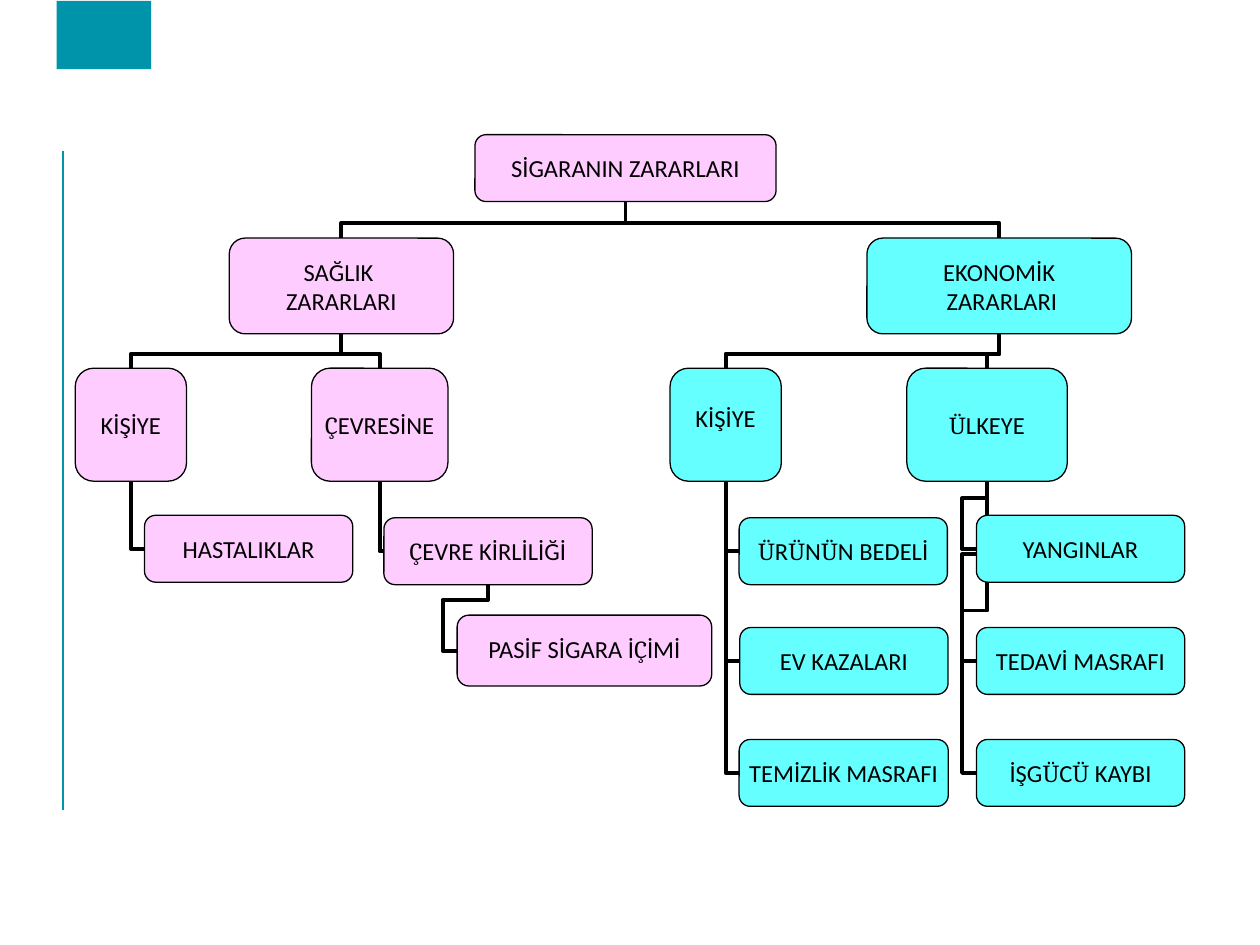
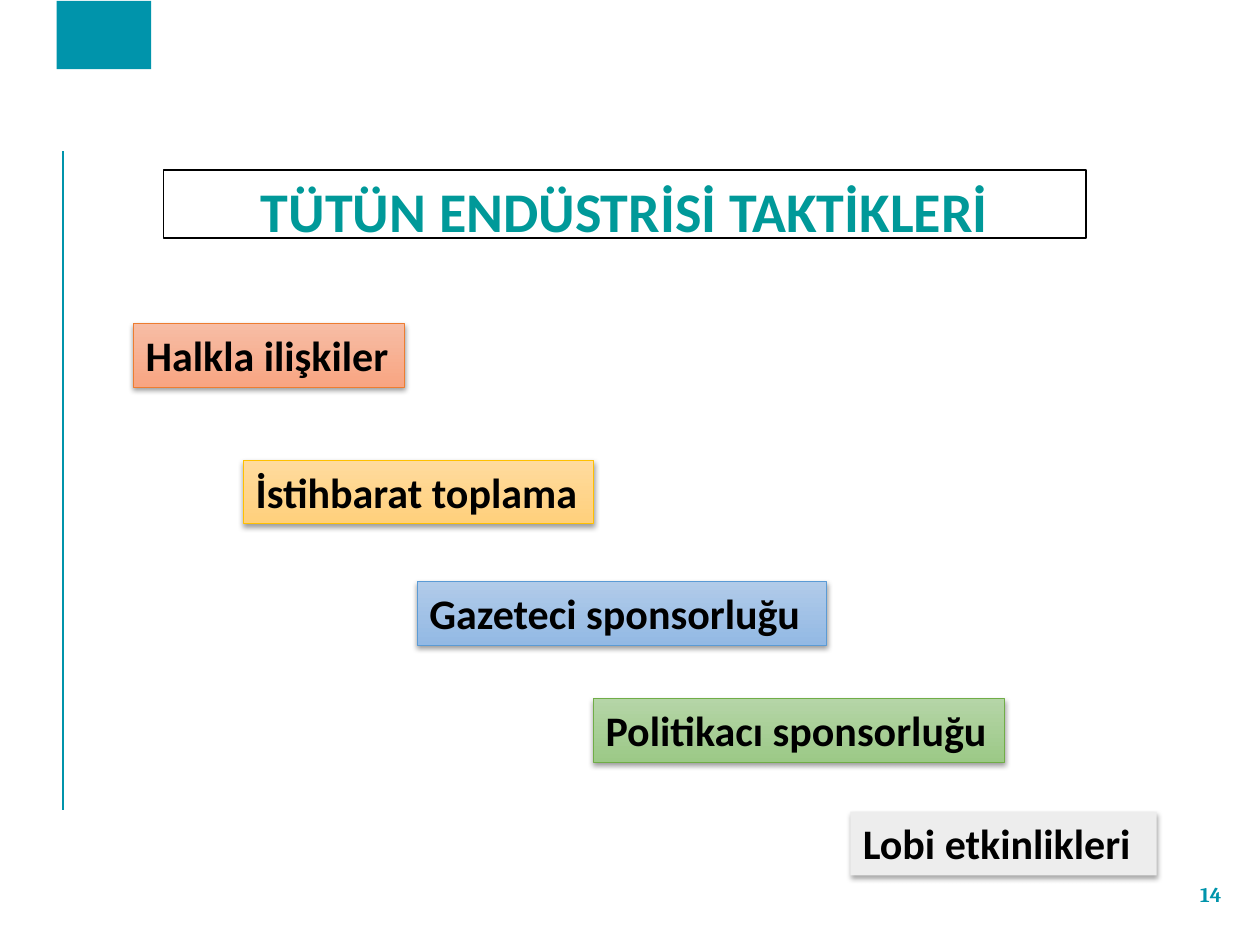
"""Build two slides on the harms of smoking and the tactics of the tobacco industry."""
from dataclasses import dataclass
from itertools import groupby

from lxml.etree import SubElement
from pptx import Presentation
from pptx.dml.color import RGBColor
from pptx.enum.shapes import MSO_CONNECTOR as Line, MSO_SHAPE as Shape
from pptx.enum.text import MSO_ANCHOR as Anchor, PP_ALIGN as Align
from pptx.oxml.ns import qn
from pptx.util import Pt


@dataclass(frozen=True)
class Theme:
    accent: str = "0094AB"
    title: str = "009999"
    ink: str = "000000"
    pink: str = "FFCCFF"
    cyan: str = "66FFFF"
    body_font: str = "Calibri"
    accent_font: str = "Cambria"
    title_size: float = 32
    tactic_size: float = 24
    node_size: float = 14
    number_size: float = 12


THEME = Theme()
BUS_DROP = 0.58
BRACKET_REACH = 8.3

ROW_TOPS = (294.5, 358.6, 422.6)
NODES = {
    "root": ("SİGARANIN ZARARLARI", 271.4, 77, 172.1, 38.2, THEME.pink),
    "health": ("SAĞLIK \nZARARLARI", 131, 136.1, 128.2, 54.7, THEME.pink),
    "economy": ("EKONOMİK\n ZARARLARI", 495.4, 136.1, 151.2, 54.7, THEME.cyan),
    "person": ("KİŞİYE", 43, 210.4, 63.6, 64.6, THEME.pink),
    "surroundings": ("ÇEVRESİNE", 178, 210.4, 78, 64.6, THEME.pink),
    "purse": ("KİŞİYE", 382.9, 210.4, 63.6, 64.6, THEME.cyan),
    "country": ("ÜLKEYE", 518.2, 210.4, 91.7, 64.6, THEME.cyan),
    "illness": ("HASTALIKLAR", 82.6, ROW_TOPS[0], 119, 38.2, THEME.pink),
    "pollution": ("ÇEVRE KİRLİLİĞİ", 219.4, 295.9, 119, 38.2, THEME.pink),
    "fires": ("YANGINLAR", 558, ROW_TOPS[0], 119, 38.2, THEME.cyan),
    "price": ("ÜRÜNÜN BEDELİ", 422.4, 295.9, 119, 38.2, THEME.cyan),
    "accidents": ("EV KAZALARI", 422.8, ROW_TOPS[1], 119, 38.2, THEME.cyan),
    "cleaning": ("TEMİZLİK MASRAFI", 422.4, ROW_TOPS[2], 119.5, 38.2, THEME.cyan),
    "treatment": ("TEDAVİ MASRAFI", 558, ROW_TOPS[1], 119, 38.2, THEME.cyan),
    "workforce": ("İŞGÜCÜ KAYBI", 558, ROW_TOPS[2], 119, 38.2, THEME.cyan),
    "passive": ("PASİF SİGARA İÇİMİ", 261.2, 351.5, 145.5, 40.5, THEME.pink),
}
LIFTS = {"purse": 7.5, "passive": 2.4}
BRANCHES = {
    "root": ("health", "economy"),
    "health": ("person", "surroundings"),
    "economy": ("purse", "country"),
}
HANGERS = {
    "person": ("illness",),
    "surroundings": ("pollution",),
    "purse": ("price", "accidents", "cleaning"),
}
BRACKETS = {
    "country": ("fires", "treatment", "workforce"),
    "pollution": ("passive",),
}

TACTICS = (
    ("Halkla ilişkiler", 76.2, 184.8, 155, ("F7BDA5", "F8A582"), "ED7D31"),
    ("İstihbarat toplama", 139, 263, 200.2, ("FFDB9E", "FFD07C"), "FFC000"),
    ("Gazeteci sponsorluğu", 238.3, 332.3, 234, ("B1CBE9", "93B9E4"), "5B9BD5"),
    ("Politikacı sponsorluğu", 339, 399.2, 235, ("B5D5A7", "9CC987"), "70AD47"),
    ("Lobi etkinlikleri", 486, 463.8, 175, ("EDEDED",), None),
)


def rgb(value):
    return RGBColor.from_string(value)


def apply(target, values):
    for name, value in values.items():
        setattr(target, name, value)


def points(*lengths):
    return [Pt(length) for length in lengths]


def set_line(line, color, width):
    line.color.rgb = rgb(color)
    line.width = Pt(width)


def write(box, text, size, color, bold=False, align=Align.CENTER, fonts=None):
    """Write each line of text, choosing the font of every character run."""
    pick = fonts or (lambda letter: THEME.body_font)
    frame = box.text_frame
    for index, content in enumerate(text.split("\n")):
        para = frame.add_paragraph() if index else frame.paragraphs[0]
        para.alignment = align
        for name, letters in groupby(content, pick):
            span = para.add_run()
            span.text = "".join(letters)
            apply(span.font, {"name": name, "size": Pt(size), "bold": bold})
            span.font.color.rgb = rgb(color)


def add_box(page, shape, frame, fills=(), outline=None, width=0.75):
    box = page.shapes.add_shape(shape, *points(*frame))
    box.shadow.inherit = False
    if len(fills) == 2:
        box.fill.gradient()
        box.fill.gradient_angle = 270
        for stop, color in zip(box.fill.gradient_stops, fills):
            stop.color.rgb = rgb(color)
    elif fills:
        box.fill.solid()
        box.fill.fore_color.rgb = rgb(fills[0])
    else:
        box.fill.background()
    if outline:
        set_line(box.line, outline, width)
    else:
        box.line.fill.background()
    return box


def add_line(page, kind, ends, color, width):
    line = page.shapes.add_connector(kind, *points(*ends))
    set_line(line.line, color, width)
    SubElement(line._element.spPr, qn("a:effectLst"))
    return line


def add_elbow(page, preset, frame, adjustments=(), **turn):
    """Draw a bent connector in a left, top, width, height frame."""
    left, top, width, height = frame
    ends = left, top, left + width, top + height
    properties = add_line(page, Line.ELBOW, ends, THEME.ink, 2.25)._element.spPr
    for name, value in turn.items():
        properties.find(qn("a:xfrm")).set(name, str(value))
    geometry = properties.find(qn("a:prstGeom"))
    geometry.set("prst", preset)
    guides = geometry.find(qn("a:avLst"))
    if guides is None:
        guides = SubElement(geometry, qn("a:avLst"))
    for number, share in enumerate(adjustments, 1):
        formula = f"val {round(share * 100000)}"
        SubElement(guides, qn("a:gd"), name=f"adj{number}", fmla=formula)


def bottom_middle(key):
    _, left, top, width, height, _ = NODES[key]
    return left + width / 2, top + height


def left_middle(key):
    _, left, top, _, height, _ = NODES[key]
    return left, top + height / 2


def add_branch(page, parent, child):
    """Link the bottom of a parent to the top of a child."""
    start_x, start_y = bottom_middle(parent)
    end_x, end_y = bottom_middle(child)[0], NODES[child][2]
    drop, shift = end_y - start_y, abs(end_x - start_x)
    frame = ((start_x + end_x - drop) / 2, (start_y + end_y - shift) / 2, drop, shift)
    add_elbow(page, "bentConnector3", frame, (BUS_DROP,),
              rot=90 * 60000, flipV=int(end_x > start_x))


def add_hanger(page, parent, child):
    """Link a parent's bottom to the left side of a child standing to its right."""
    left, top = bottom_middle(parent)
    right, bottom = left_middle(child)
    add_elbow(page, "bentConnector2", (left, top, right - left, bottom - top), rot=180 * 60000)


def add_bracket(page, parent, child):
    """Link a parent's bottom to a child's left side around its outer edge."""
    right, top = bottom_middle(parent)
    left, bottom = left_middle(child)
    width, height = right - left, bottom - top
    turn_y = (top + NODES[child][2]) / 2
    shares = -BRACKET_REACH / width, (bottom - turn_y) / height
    add_elbow(page, "bentConnector4", (left, top, width, height), shares,
              rot=180 * 60000, flipH=1)


def add_node(page, key):
    text, *frame, fill = NODES[key]
    box = add_box(page, Shape.ROUNDED_RECTANGLE, frame, (fill,), THEME.ink)
    apply(box.text_frame, {
        "word_wrap": False, "vertical_anchor": Anchor.MIDDLE,
        "margin_left": 0, "margin_right": 0, "margin_top": 0,
        "margin_bottom": Pt(LIFTS.get(key, 0)),
    })
    write(box, text, THEME.node_size, THEME.ink,
          fonts=lambda letter: THEME.accent_font if letter in "ÇÜ" else THEME.body_font)


def add_shadow(box, opacity, distance):
    """Give a box a soft shadow falling straight down."""
    effects = box._element.spPr.find(qn("a:effectLst"))
    shadow = SubElement(effects, qn("a:outerShdw"), blurRad=str(Pt(3.1)),
                        dist=str(Pt(distance)), dir=str(90 * 60000), rotWithShape="0")
    color = SubElement(shadow, qn("a:srgbClr"), val=THEME.ink)
    SubElement(color, qn("a:alpha"), val=str(opacity * 1000))


def add_tactic(page, text, left, top, width, fills, outline):
    box = add_box(page, Shape.RECTANGLE, (left, top, width, 36.4), fills, outline, 0.5)
    add_shadow(box, *((38, 1.6) if outline else (35, 1.8)))
    apply(box.text_frame, {"word_wrap": True, "vertical_anchor": Anchor.TOP})
    write(box, text, THEME.tactic_size, THEME.ink, True, Align.LEFT)


def add_title(page, text):
    box = add_box(page, Shape.RECTANGLE, (93.5, 97.2, 527.2, 38.8 + 7.2 - 7.2), (), THEME.ink)
    apply(box.text_frame, {"word_wrap": True, "vertical_anchor": Anchor.TOP})
    write(box, text, THEME.title_size, THEME.title, True)


def add_page_number(page, number):
    box = page.shapes.add_textbox(*points(666, 482.4, 51.8, 57.6))
    apply(box.text_frame, {"word_wrap": True, "vertical_anchor": Anchor.MIDDLE})
    write(box, number, THEME.number_size, THEME.accent, True,
          fonts=lambda letter: THEME.accent_font)


def add_page(deck):
    """Add a blank page with the shared side rule and corner band."""
    page = deck.slides.add_slide(deck.slide_layouts[6])
    add_line(page, Line.STRAIGHT, (36, 86.4, 36, 463), THEME.accent, 1)
    add_box(page, Shape.RECTANGLE, (32.4, 0.5, 54, 39), (THEME.accent,))
    return page


def add_harms_page(deck):
    page = add_page(deck)
    links = ((BRACKETS, add_bracket), (HANGERS, add_hanger), (BRANCHES, add_branch))
    for families, add_link in links:
        for parent, children in families.items():
            for child in children:
                add_link(page, parent, child)
    for key in NODES:
        add_node(page, key)


def add_tactics_page(deck):
    page = add_page(deck)
    add_page_number(page, "14")
    add_title(page, "TÜTÜN ENDÜSTRİSİ TAKTİKLERİ")
    for tactic in TACTICS:
        add_tactic(page, *tactic)


def main():
    deck = Presentation()
    apply(deck, {"slide_width": Pt(720), "slide_height": Pt(540)})
    add_harms_page(deck)
    add_tactics_page(deck)
    deck.save("out.pptx")


if __name__ == "__main__":
    main()
